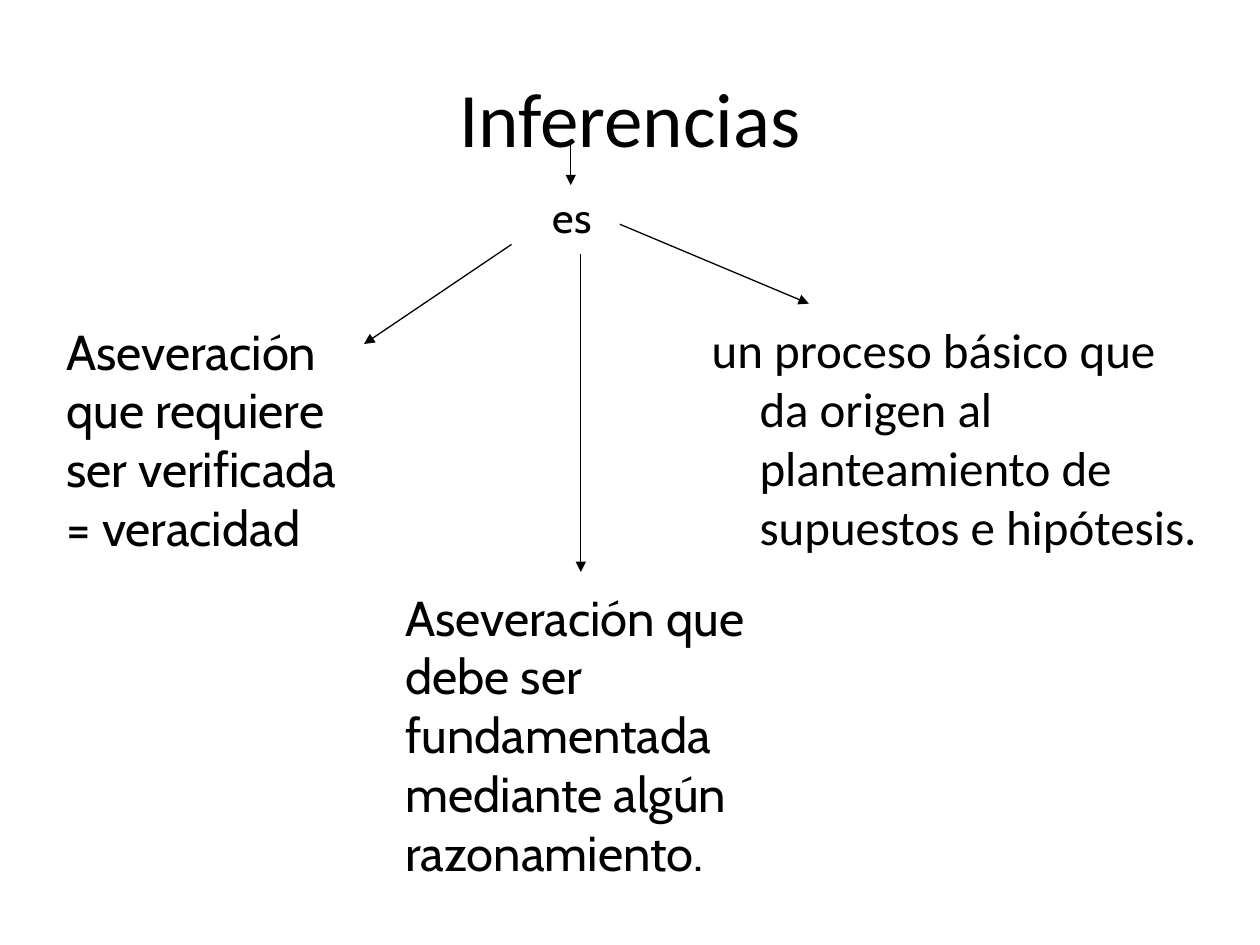
from dataclasses import dataclass

from lxml.etree import SubElement
from pptx import Presentation
from pptx.dml.color import RGBColor
from pptx.enum.shapes import MSO_CONNECTOR as Connector
from pptx.enum.text import MSO_ANCHOR as Anchor, PP_ALIGN as Align
from pptx.oxml.ns import qn
from pptx.slide import Slide
from pptx.util import Inches, Pt

BLACK = RGBColor(0, 0, 0)


def write_text(frame, text, font="Cabin", size=28, color=BLACK,
               align=Align.LEFT, anchor=Anchor.TOP, hanging=0):
    """Put one formatted paragraph in a text frame."""
    frame.word_wrap = True
    frame.vertical_anchor = anchor
    para = frame.paragraphs[0]
    para.alignment = align
    if hanging:
        properties = para._p.get_or_add_pPr()
        properties.set("marL", str(Inches(hanging)))
        properties.set("indent", str(-Inches(hanging)))
    span = para.add_run()
    span.text = text
    span.font.name = font
    span.font.size = Pt(size)
    span.font.color.rgb = color


@dataclass
class ConceptMap:
    """Draw the parts of a concept map on one slide."""
    page: Slide
    color: RGBColor = BLACK
    line_width: float = 0.75

    def title(self, text, left, top, width, height):
        """Place and format the title placeholder."""
        box = self.page.shapes.title
        box.left, box.top = Inches(left), Inches(top)
        box.width, box.height = Inches(width), Inches(height)
        write_text(box.text_frame, text, font="Calibri", size=44,
                   color=self.color, align=Align.CENTER, anchor=Anchor.MIDDLE)

    def concept(self, text, left, top, width, height, **style):
        """Add a text box holding one concept."""
        box = self.page.shapes.add_textbox(
            Inches(left), Inches(top), Inches(width), Inches(height))
        write_text(box.text_frame, text, color=self.color, **style)

    def arrow(self, start, end):
        """Add a straight arrow between two points."""
        points = [Inches(value) for value in (*start, *end)]
        arrow = self.page.shapes.add_connector(Connector.STRAIGHT, *points)
        arrow.line.color.rgb = self.color
        arrow.line.width = Pt(self.line_width)
        SubElement(arrow.line._get_or_add_ln(), qn("a:tailEnd"), type="triangle")
        SubElement(arrow._element.spPr, qn("a:effectLst"))


def main():
    """Build the slide and save it."""
    deck = Presentation()
    deck.slide_width, deck.slide_height = Inches(10), Inches(7.5)
    concept_map = ConceptMap(deck.slides.add_slide(deck.slide_layouts[5]))

    concept_map.title("Inferencias", 0.5, 0.3, 9, 1.25)
    concept_map.concept(
        "un proceso básico que da origen al planteamiento de supuestos e hipótesis.",
        5.55, 2.49, 4.17, 2.12, font="Calibri", hanging=0.38)
    concept_map.concept("Aseveración que requiere ser verificada = veracidad",
                        0.43, 2.5, 2.52, 1.97)
    concept_map.concept(
        "Aseveración que debe ser fundamentada mediante algún razonamiento.",
        3.12, 4.61, 2.91, 2.44)
    concept_map.concept("es", 4.29, 1.47, 0.86, 0.5, size=24)

    for start, end in (
        ((4.53, 1.15), (4.53, 1.47)),
        ((4.92, 1.78), (6.42, 2.41)),
        ((4.61, 2.02), (4.61, 4.54)),
        ((4.06, 1.94), (2.89, 2.73)),
    ):
        concept_map.arrow(start, end)

    deck.save("out.pptx")


if __name__ == "__main__":
    main()
